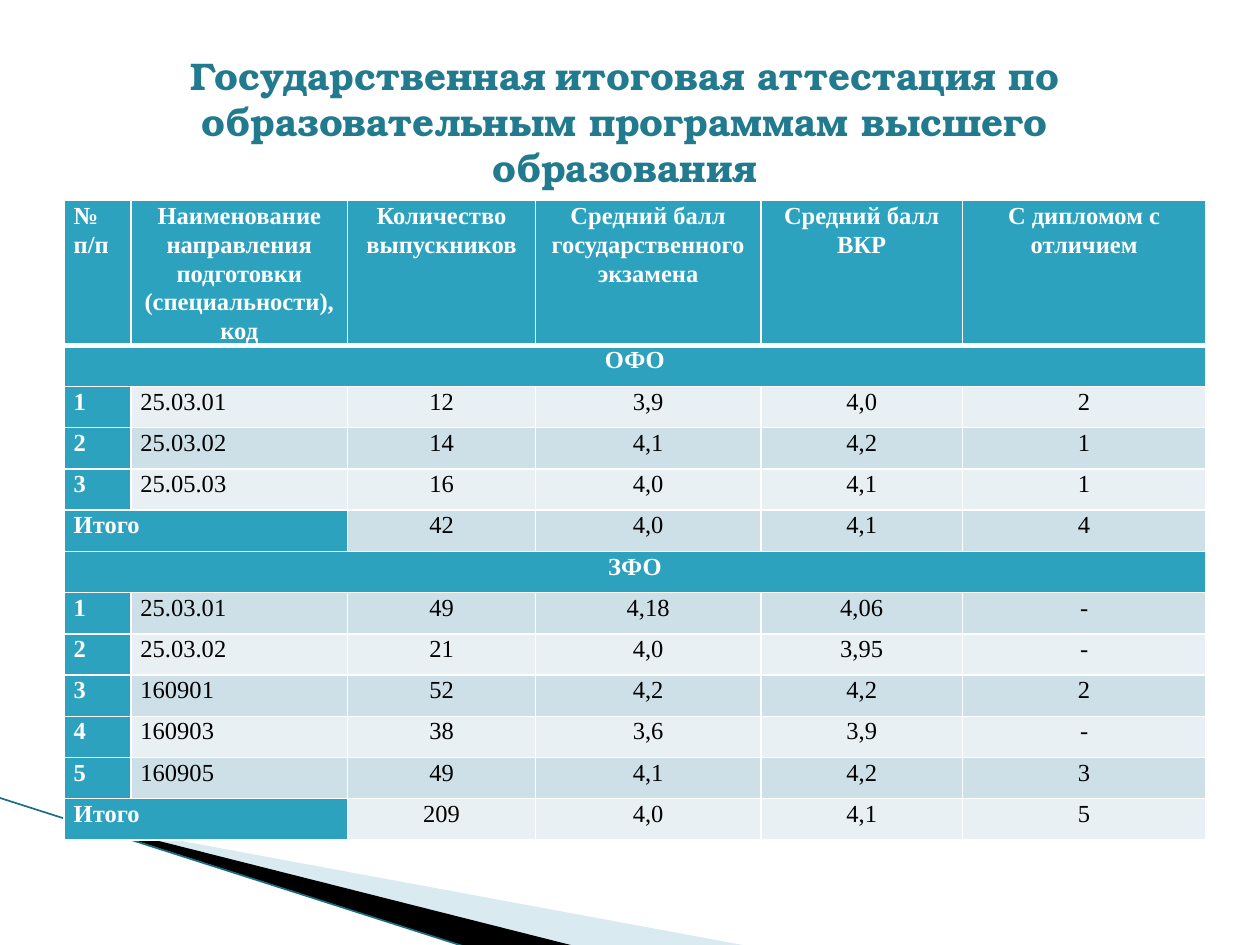
from typing import NamedTuple, Optional

from lxml.etree import SubElement
from pptx import Presentation
from pptx.dml.color import RGBColor
from pptx.enum.shapes import MSO_CONNECTOR
from pptx.enum.text import MSO_ANCHOR, MSO_AUTO_SIZE, PP_ALIGN
from pptx.oxml.ns import qn
from pptx.util import Inches, Pt

WHITE = RGBColor(0xFF, 0xFF, 0xFF)
BLACK = RGBColor(0x00, 0x00, 0x00)
TEAL = RGBColor(0x2D, 0xA2, 0xBF)
TITLE_TEAL = RGBColor(0x22, 0x7A, 0x8F)
LINE_TEAL = RGBColor(0x1B, 0x6E, 0x82)
PALE_BLUE = RGBColor(0xA0, 0xCB, 0xDC)
BANDS = (RGBColor(0xE8, 0xF0, 0xF4), RGBColor(0xCD, 0xE0, 0xE8))

TITLE_FONT = "TeX Gyre Bonum"
TABLE_FONT = "Times New Roman"


class Span(NamedTuple):
    text: str
    size: int
    bold: bool


class Frame(NamedTuple):
    left: float
    top: float
    width: float
    height: float


class Wedge(NamedTuple):
    frame: Frame
    points: list[tuple[float, float]]
    color: RGBColor
    opacity: Optional[int] = None


TITLE = [
    Span("Государственная", 22, True),
    Span(" ", 18, False),
    Span("итоговая аттестация по образовательным программам высшего образования", 22, True),
]
WEDGES = [
    Wedge(Frame(0.78, 5.47, 4.16, 1.58),
          [(0.55, 6.51), (5.95, 7.51), (4.56, 7.51), (0.55, 6.5)], PALE_BLUE, 40),
    Wedge(Frame(-0.06, 6.33, 4.16, 0.92),
          [(0.53, 6.49), (4.57, 7.51), (3.72, 7.52), (0.54, 6.5)], BLACK),
]
COLUMN_WIDTHS = [0.53, 1.72, 1.49, 1.79, 1.6, 1.93]
HEADER_HEIGHT = Inches(1.14)
ROW_HEIGHT = Inches(3.93) // 12
# A row of one text is a section heading; a row of five is a total.
ROWS = [
    ["№ п/п", "Наименование направления подготовки (специальности),\nкод",
     "Количество выпускников", "Средний балл государственного экзамена",
     "Средний балл ВКР", "С дипломом с отличием"],
    ["ОФО"],
    ["1", "25.03.01", "12", "3,9", "4,0", "2"],
    ["2", "25.03.02", "14", "4,1", "4,2", "1"],
    ["3", "25.05.03", "16", "4,0", "4,1", "1"],
    ["Итого", "42", "4,0", "4,1", "4"],
    ["ЗФО"],
    ["1", "25.03.01", "49", "4,18", "4,06", "-"],
    ["2", "25.03.02", "21", "4,0", "3,95", "-"],
    ["3", "160901", "52", "4,2", "4,2", "2"],
    ["4", "160903", "38", "3,6", "3,9", "-"],
    ["5", "160905", "49", "4,1", "4,2", "3"],
    ["Итого", "209", "4,0", "4,1", "5"],
]


def set_frame(shape, frame: Frame) -> None:
    """Change the frame of a freeform while its outline stays in place on the slide."""
    left, top, width, height = (Inches(length) for length in frame)
    shift_x, shift_y = shape.left - left, shape.top - top
    for point in shape._element.iter(qn("a:pt")):
        point.set("x", str(int(point.get("x")) + shift_x))
        point.set("y", str(int(point.get("y")) + shift_y))
    for outline in shape._element.iter(qn("a:path")):
        outline.set("w", str(width))
        outline.set("h", str(height))
    shape.left, shape.top, shape.width, shape.height = left, top, width, height


def draw_wedge(page, wedge: Wedge) -> None:
    start, *others = [(Inches(x), Inches(y)) for x, y in wedge.points]
    builder = page.shapes.build_freeform(*start)
    builder.add_line_segments(others, close=True)
    shape = builder.convert_to_shape()
    set_frame(shape, wedge.frame)
    shape.shadow.inherit = False
    shape.line.fill.background()
    shape.fill.solid()
    shape.fill.fore_color.rgb = wedge.color
    if wedge.opacity is not None:
        color = shape.fill._xPr.find(qn("a:solidFill"))[0]
        SubElement(color, qn("a:alpha"), val=str(wedge.opacity * 1000))


def draw_edge_line(page) -> None:
    line = page.shapes.add_connector(
        MSO_CONNECTOR.STRAIGHT, Inches(-0.01), Inches(6.33), Inches(3.71), Inches(7.52))
    line.line.color.rgb = LINE_TEAL
    line.line.width = Pt(0.95)
    SubElement(line._element.spPr, qn("a:effectLst"))


def write_title(page, spans: list[Span]) -> None:
    title = page.shapes.title
    title.left, title.top = Inches(0.51), Inches(0.36)
    title.width, title.height = Inches(8.9), Inches(1.58)
    frame = title.text_frame
    frame.word_wrap = True
    frame.auto_size = MSO_AUTO_SIZE.NONE
    frame.vertical_anchor = MSO_ANCHOR.TOP
    para = frame.paragraphs[0]
    para.alignment = PP_ALIGN.CENTER
    for span in spans:
        run = para.add_run()
        run.text = span.text
        run.font.name = TITLE_FONT
        run.font.size = Pt(span.size)
        run.font.bold = span.bold
        run.font.color.rgb = TITLE_TEAL


def set_borders(cell, row: int) -> None:
    """White borders, with a thick one between the header and the body."""
    properties = cell._tc.get_or_add_tcPr()
    for side in "LRTB":
        thick = (row, side) in ((0, "B"), (1, "T"))
        border = SubElement(properties, qn(f"a:ln{side}"), w=str(Pt(3 if thick else 1)))
        fill = SubElement(border, qn("a:solidFill"))
        SubElement(fill, qn("a:srgbClr"), val=str(WHITE))


def style_cell(cell, fill: RGBColor, centered: bool) -> None:
    strong = fill == TEAL
    cell.margin_left = cell.margin_right = Pt(5.4)
    cell.margin_top = cell.margin_bottom = 0
    cell.fill.solid()
    cell.fill.fore_color.rgb = fill
    for para in cell.text_frame.paragraphs:
        para.alignment = PP_ALIGN.CENTER if centered else PP_ALIGN.LEFT
        para.line_spacing = 1.07
        for run in para.runs:
            run.font.name = TABLE_FONT
            run.font.size = Pt(14)
            run.font.bold = strong
            run.font.color.rgb = WHITE if strong else BLACK


def draw_table(page, rows: list[list[str]]) -> None:
    columns = len(COLUMN_WIDTHS)
    table = page.shapes.add_table(
        len(rows), columns, Inches(0.51), Inches(1.59), Inches(sum(COLUMN_WIDTHS)),
        HEADER_HEIGHT + ROW_HEIGHT * (len(rows) - 1)).table
    for column, width in zip(table.columns, COLUMN_WIDTHS):
        column.width = Inches(width)
    for r, texts in enumerate(rows):
        table.rows[r].height = ROW_HEIGHT if r else HEADER_HEIGHT
        first_span = columns - len(texts) + 1
        if first_span > 1:
            table.cell(r, 0).merge(table.cell(r, first_span - 1))
        padded = texts[:1] + [""] * (first_span - 1) + texts[1:]
        for c, text in enumerate(padded):
            cell = table.cell(r, c)
            if text:
                cell.text_frame.text = text
            set_borders(cell, r)
            strong = r == 0 or c < first_span
            centered = c > 1 or len(texts) == 1 or (r == 0 and c == 1)
            style_cell(cell, TEAL if strong else BANDS[r % 2], centered)


def main() -> None:
    deck = Presentation()
    deck.slide_width, deck.slide_height = Inches(10), Inches(7.5)
    page = deck.slides.add_slide(deck.slide_layouts[5])
    for wedge in WEDGES:
        draw_wedge(page, wedge)
    draw_edge_line(page)
    draw_table(page, ROWS)
    write_title(page, TITLE)
    deck.save("out.pptx")


if __name__ == "__main__":
    main()
